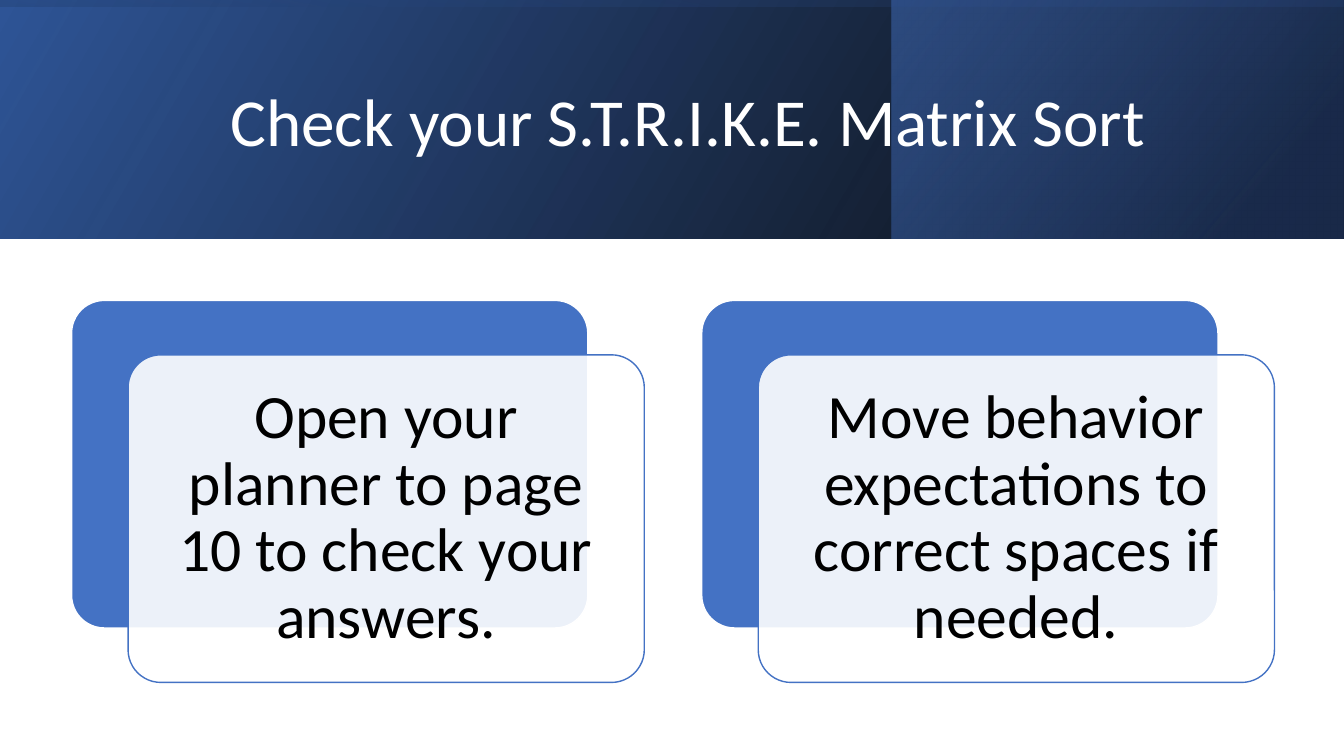
from pptx import Presentation
from pptx.dml.color import RGBColor
from pptx.enum.shapes import MSO_SHAPE
from pptx.enum.text import MSO_ANCHOR, MSO_AUTO_SIZE, PP_ALIGN
from pptx.oxml import parse_xml
from pptx.oxml.ns import nsdecls, qn
from pptx.util import Inches, Pt

# Content
TITLE = "Check your S.T.R.I.K.E. Matrix Sort"
STEPS = [
    "Open your planner to page 10 to check your answers.",
    "Move behavior expectations to correct spaces if needed.",
]


class Theme:
    font = "Calibri"
    title_size, step_size = 48, 44
    white, black = "FFFFFF", "000000"
    blue, deep_blue, navy = "4472C4", "2F5597", "203864"


# Layout, in inches
SLIDE_WIDTH, SLIDE_HEIGHT = 13.33, 7.5
BANNER_HEIGHT = 2.37
CARD_LEFT, CARD_TOP, CARD_WIDTH, CARD_HEIGHT = 0.71, 2.98, 5.12, 3.25
CARD_PITCH = 6.25
FRONT_SHIFT_X, FRONT_SHIFT_Y = 0.56, 0.54
TEXT_INSET = 0.1

# Banner layers: box, rotation, gradient angle, stops (position, colour, opacity)
TURNED_LEFT = (SLIDE_WIDTH - BANNER_HEIGHT) / 2
BANNER_LAYERS = [
    ((0, 0, SLIDE_WIDTH, BANNER_HEIGHT), 0, 330,
     [(0, Theme.black, 96), (100, Theme.deep_blue, 100)]),
    ((8.84, 0, 4.48, BANNER_HEIGHT), 0, 320,
     [(19, Theme.navy, 68), (100, Theme.blue, 48)]),
    ((TURNED_LEFT, -TURNED_LEFT, BANNER_HEIGHT, SLIDE_WIDTH), 270, 350,
     [(23, Theme.deep_blue, 16), (99, Theme.black, 45)]),
]


def add_box(slide, kind, box, fill, line=None, opacity=100):
    shape = slide.shapes.add_shape(kind, *map(Inches, box))
    shape.shadow.inherit = False
    shape.fill.solid()
    shape.fill.fore_color.rgb = RGBColor.from_string(fill)
    if opacity < 100:
        color = shape.fill._xPr.find(qn("a:solidFill"))[0]
        color.append(parse_xml(
            f'<a:alpha {nsdecls("a")} val="{opacity * 1000}"/>'))
    if line:
        shape.line.color.rgb = RGBColor.from_string(line)
        shape.line.width = Pt(1)
    else:
        shape.line.fill.background()
    return shape


def add_banner_layer(slide, box, rotation, angle, stops):
    shape = add_box(slide, MSO_SHAPE.RECTANGLE, box, Theme.deep_blue)
    shape.rotation = rotation
    properties = shape._element.spPr
    properties.find(qn("a:xfrm")).set("flipH", "1")
    stop_xml = "".join(
        f'<a:gs pos="{position * 1000}"><a:srgbClr val="{color}">'
        f'<a:alpha val="{opacity * 1000}"/></a:srgbClr></a:gs>'
        for position, color, opacity in stops)
    gradient = parse_xml(
        f'<a:gradFill {nsdecls("a")} rotWithShape="1"><a:gsLst>{stop_xml}</a:gsLst>'
        f'<a:lin ang="{angle * 60000}" scaled="0"/></a:gradFill>')
    properties.replace(properties.find(qn("a:solidFill")), gradient)


def write_text(shape, text, size, color, inset=None):
    frame = shape.text_frame
    frame.word_wrap = True
    frame.auto_size = MSO_AUTO_SIZE.NONE
    frame.vertical_anchor = MSO_ANCHOR.MIDDLE
    if inset is not None:
        frame.margin_left = frame.margin_right = Inches(inset)
        frame.margin_top = frame.margin_bottom = Inches(inset)
    paragraph = frame.paragraphs[0]
    paragraph.alignment = PP_ALIGN.CENTER
    paragraph.line_spacing = 0.9
    run = paragraph.add_run()
    run.text = text
    run.font.name = Theme.font
    run.font.size = Pt(size)
    run.font.color.rgb = RGBColor.from_string(color)


def add_card(slide, left, text):
    back = (left, CARD_TOP, CARD_WIDTH, CARD_HEIGHT)
    front = (left + FRONT_SHIFT_X, CARD_TOP + FRONT_SHIFT_Y, CARD_WIDTH, CARD_HEIGHT)
    panels = [
        add_box(slide, MSO_SHAPE.ROUNDED_RECTANGLE, back, Theme.blue, Theme.white),
        add_box(slide, MSO_SHAPE.ROUNDED_RECTANGLE, front, Theme.white, Theme.blue,
                opacity=90),
    ]
    for panel in panels:
        panel.adjustments[0] = 0.1
    label = slide.shapes.add_textbox(
        Inches(front[0] + TEXT_INSET), Inches(front[1] + TEXT_INSET),
        Inches(CARD_WIDTH - 2 * TEXT_INSET), Inches(CARD_HEIGHT - 2 * TEXT_INSET))
    write_text(label, text, Theme.step_size, Theme.black, inset=0.18)


def main():
    presentation = Presentation()
    presentation.slide_width = Inches(SLIDE_WIDTH)
    presentation.slide_height = Inches(SLIDE_HEIGHT)
    slide = presentation.slides.add_slide(presentation.slide_layouts[5])

    # Banner
    for layer in BANNER_LAYERS:
        add_banner_layer(slide, *layer)

    # Title, brought in front of the banner
    title = slide.shapes.title
    title.left, title.top = Inches(1.51), Inches(0.38)
    title.width, title.height = Inches(10.63), Inches(1.72)
    write_text(title, TITLE, Theme.title_size, Theme.white)
    slide.shapes._spTree.append(title._element)

    # Step cards
    for index, text in enumerate(STEPS):
        add_card(slide, CARD_LEFT + index * CARD_PITCH, text)

    presentation.save("out.pptx")


if __name__ == "__main__":
    main()
